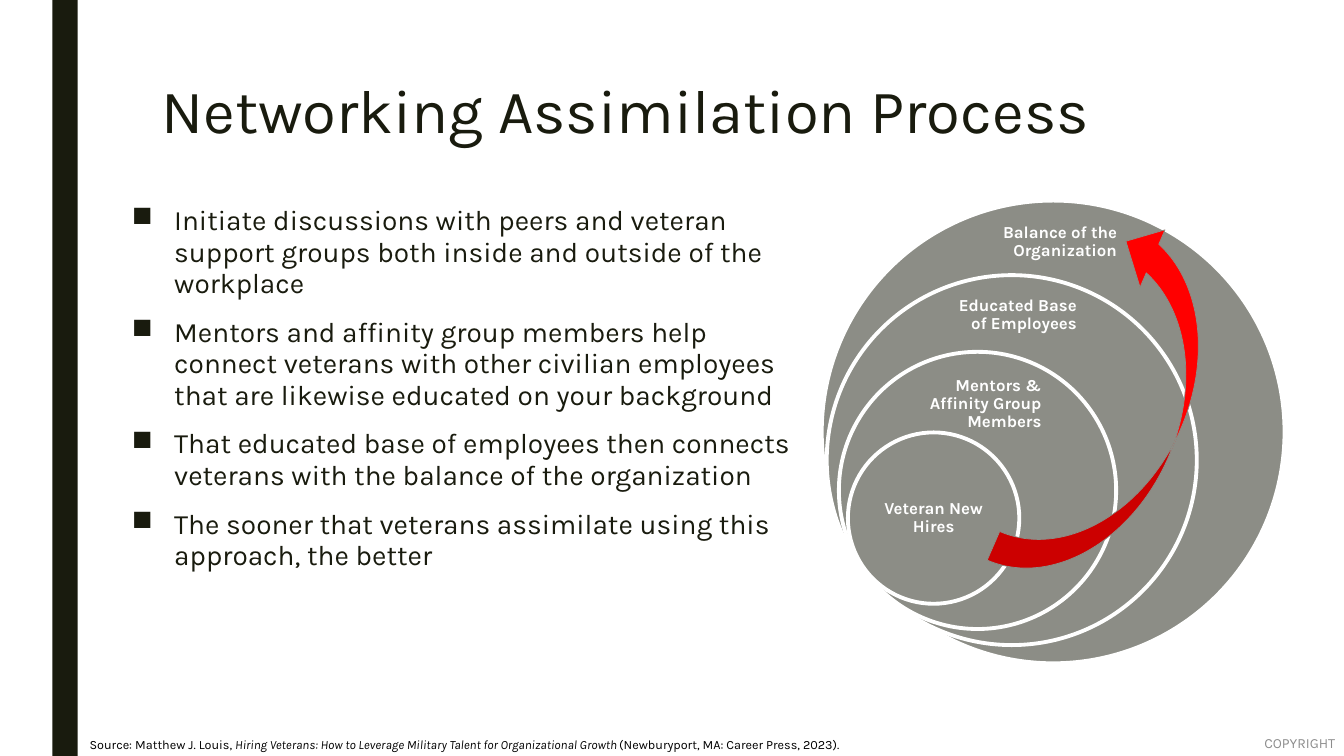
import pptx
import pptx.util
import pptx.dml.color
import pptx.enum.shapes
import pptx.enum.text
import pptx.oxml
import pptx.oxml.ns

Inches = pptx.util.Inches
Pt = pptx.util.Pt
RGBColor = pptx.dml.color.RGBColor
Shape = pptx.enum.shapes.MSO_SHAPE
Align = pptx.enum.text.PP_ALIGN
Anchor = pptx.enum.text.MSO_ANCHOR
AutoSize = pptx.enum.text.MSO_AUTO_SIZE

FONT = "Karla"
INK = RGBColor(0x19, 0x1B, 0x0E)
CIRCLE_GRAY = RGBColor(0x8C, 0x8D, 0x86)
FOOTER_GRAY = RGBColor(0x8C, 0x8C, 0x8C)
WHITE = RGBColor(0xFF, 0xFF, 0xFF)
BLACK = RGBColor(0, 0, 0)
RED = RGBColor(0xFF, 0, 0)

TITLE = "Networking Assimilation Process"
BULLETS = [
    "Initiate discussions with peers and veteran support groups both inside and outside of the workplace",
    "Mentors and affinity group members help connect veterans with other civilian employees "
    "that are likewise educated on your background",
    "That educated base of employees then connects veterans with the balance of the organization",
    "The sooner that veterans assimilate using this approach, the better",
]
SOURCE = [
    ("Source: Matthew J. Louis, ", False),
    ("Hiring Veterans: How to Leverage Military Talent for Organizational Growth ", True),
    ("(Newburyport, MA: Career Press, 2023).", False),
]
# circle left, top, diameter; label text, box, format
RING_LABEL = dict(align=Align.RIGHT, inset=0)
CENTRE_LABEL = dict(align=Align.CENTER, inset=0.09, anchor=Anchor.MIDDLE)
CIRCLES = [
    (8.15, 1.99, 4.59, "Balance of the Organization", (9.8, 2.22, 1.28, 0.69), RING_LABEL),
    (8.2, 2.73, 3.67, "Educated Base of Employees", (9.4, 2.95, 1.28, 0.66), RING_LABEL),
    (8.32, 3.49, 2.75, "Mentors & Affinity Group Members", (9.05, 3.7, 1.28, 0.62),
     dict(RING_LABEL, anchor=Anchor.MIDDLE)),
    (8.41, 4.29, 1.7, "Veteran New Hires", (8.66, 4.71, 1.2, 0.85), CENTRE_LABEL),
]


def add_shape(slide, kind, box, fill, line=None, line_width=0):
    shape = slide.shapes.add_shape(kind, *map(Inches, box))
    shape.shadow.inherit = False
    shape.fill.solid()
    shape.fill.fore_color.rgb = fill
    if line is None:
        shape.line.fill.background()
    else:
        shape.line.color.rgb = line
        shape.line.width = Pt(line_width)
    return shape


def add_bullet(paragraph):
    properties = paragraph._p.get_or_add_pPr()
    properties.set("marL", str(Inches(0.42)))
    properties.set("indent", str(Inches(-0.42)))
    properties.append(pptx.oxml.parse_xml(
        f'<a:buChar {pptx.oxml.ns.nsdecls("a")} char="■"/>'))


def write_text(shape, paragraphs, box, size, color, bold=False, align=Align.LEFT, anchor=Anchor.TOP,
               inset=None, spacing=None, bullets=False, wrap=True):
    """Fill a shape with paragraphs, each a string or a list of (text, italic) runs."""
    shape.left, shape.top, shape.width, shape.height = map(Inches, box)
    frame = shape.text_frame
    frame.word_wrap = wrap
    frame.auto_size = AutoSize.NONE if wrap else AutoSize.SHAPE_TO_FIT_TEXT
    frame.vertical_anchor = anchor
    if inset is not None:
        frame.margin_left = frame.margin_right = Inches(inset)
        frame.margin_top = frame.margin_bottom = Inches(inset)
    for index, runs in enumerate(paragraphs):
        paragraph = frame.add_paragraph() if index else frame.paragraphs[0]
        if bullets:
            add_bullet(paragraph)
            paragraph.space_before = Pt(10 if index else 0)
            paragraph.space_after = Pt(2)
        paragraph.alignment = align
        if spacing:
            paragraph.line_spacing = spacing
        for text, italic in [(runs, False)] if isinstance(runs, str) else runs:
            run = paragraph.add_run()
            run.text = text
            run.font.name = FONT
            run.font.size = Pt(size)
            run.font.bold = bold
            run.font.italic = italic
            run.font.color.rgb = color


def add_text(slide, paragraphs, box, **text_format):
    textbox = slide.shapes.add_textbox(*map(Inches, box))
    write_text(textbox, paragraphs, box, **text_format)


def main():
    presentation = pptx.Presentation()
    presentation.slide_width = Inches(13.33)
    presentation.slide_height = Inches(7.5)
    slide = presentation.slides.add_slide(presentation.slide_layouts[5])

    add_shape(slide, Shape.RECTANGLE, (0.52, 0, 0.25, 7.5), INK)
    write_text(slide.shapes.title, [TITLE], (1.5, 0.75, 10.5, 1.62), size=44, color=INK, spacing=0.89)
    add_text(slide, BULLETS, (1.21, 1.99, 6.93, 4.84), size=20, color=INK, spacing=0.94, bullets=True)

    for left, top, diameter, label, label_box, label_format in CIRCLES:
        add_shape(slide, Shape.OVAL, (left, top, diameter, diameter), CIRCLE_GRAY, WHITE, 2.75)
        add_text(slide, [label], label_box, size=12, color=WHITE, bold=True, spacing=0.9, **label_format)

    arrow = add_shape(slide, Shape.CURVED_RIGHT_ARROW, (10.49, 2.2, 1.24, 3.76), RED, CIRCLE_GRAY, 0.5)
    arrow.rotation = 203.5

    add_text(slide, [SOURCE], (0.79, 7.26, 7.66, 0.25), size=9, color=BLACK,
             anchor=Anchor.MIDDLE, wrap=False)
    add_text(slide, ["COPYRIGHT"], (12.23, 7.15, 1.11, 0.44), size=10, color=FOOTER_GRAY,
             align=Align.RIGHT, anchor=Anchor.MIDDLE)
    presentation.save("out.pptx")


if __name__ == "__main__":
    main()
